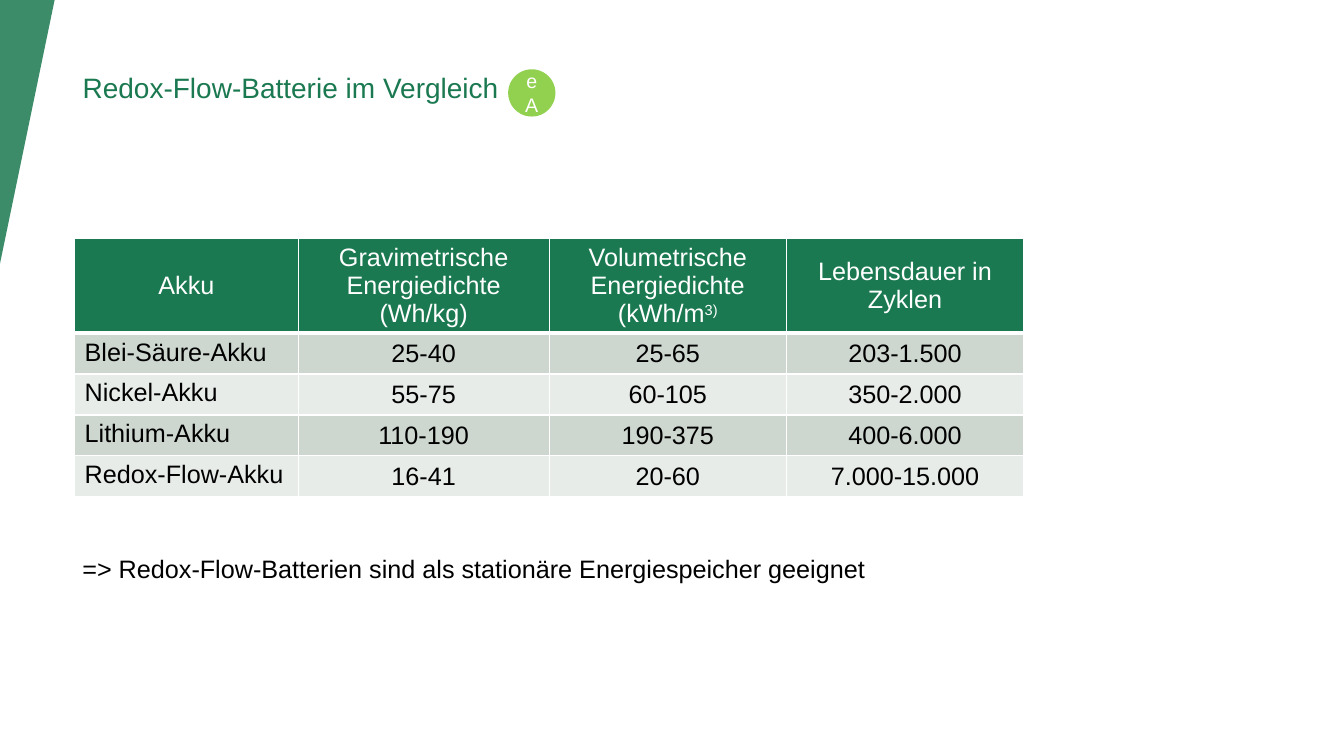
from pptx import Presentation
from pptx import util as u
from pptx.dml.color import RGBColor
from pptx.enum import shapes, text
from pptx.oxml import parse_xml
from pptx.oxml.ns import nsdecls, qn

HUES = {"green": "1A7950", "lime": "92D050", "white": "FFFFFF",
        "black": "000000", "dark": "CDD7D0", "pale": "E8ECE9"}
LEFT, MID = text.PP_ALIGN.LEFT, text.PP_ALIGN.CENTER
TOP, CENTRE = text.MSO_ANCHOR.TOP, text.MSO_ANCHOR.MIDDLE

COLS = [213, 239, 226, 226]
HEAD, ROW = 90, 39
ROWS = [
    ["Akku", "Gravimetrische Energiedichte (Wh/kg)",
     "Volumetrische Energiedichte (kWh/m^3)", "Lebensdauer in Zyklen"],
    ["Blei-Säure-Akku", "25-40", "25-65", "203-1.500"],
    ["Nickel-Akku", "55-75", "60-105", "350-2.000"],
    ["Lithium-Akku", "110-190", "190-375", "400-6.000"],
    ["Redox-Flow-Akku", "16-41", "20-60", "7.000-15.000"],
]


def px(n):
    return u.Emu(n * 9525)


def hue(name):
    return RGBColor.from_string(HUES[name])


class Page:
    """Holds the font and the current slide."""

    def __init__(self, deck, font):
        self.font = font
        self.slide = deck.slides.add_slide(deck.slide_layouts[5])

    def label(self, frame, words, size, color, align=LEFT):
        """Fill the first paragraph; text after ^ is raised."""
        para = frame.paragraphs[0]
        para.alignment = align
        base, _, power = words.partition("^")
        para.add_run().text = base
        if power:
            run = para.add_run()
            run.text = power
            run.font._element.set("baseline", "30000")
        para.font.name, para.font.size = self.font, u.Pt(size)
        para.font.color.rgb = hue(color)

    def title(self, box, words):
        shape = self.slide.shapes.title
        shape.left, shape.top, shape.width, shape.height = map(px, box)
        shape.text_frame.vertical_anchor = TOP
        self.label(shape.text_frame, words, 20, "green")

    def note(self, box, words):
        frame = self.slide.shapes.add_textbox(*map(px, box)).text_frame
        frame.word_wrap = True
        frame.auto_size = text.MSO_AUTO_SIZE.SHAPE_TO_FIT_TEXT
        self.label(frame, words, 18, "black")

    def shape(self, kind, box, color):
        shape = self.slide.shapes.add_shape(kind, *map(px, box))
        shape.shadow.inherit = False
        shape.fill.solid()
        shape.fill.fore_color.rgb = hue(color)
        shape.line.fill.background()
        return shape

    def wedge(self, box):
        shape = self.shape(shapes.MSO_SHAPE.ISOSCELES_TRIANGLE, box, "green")
        shape.adjustments[0] = 1
        shape.rotation = 180
        tint = shape._element.spPr.find(".//" + qn("a:srgbClr"))
        tint.append(parse_xml(f'<a:alpha {nsdecls("a")} val="85000"/>'))

    def badge(self, box, words):
        shape = self.shape(shapes.MSO_SHAPE.OVAL, box, "lime")
        shape.line.color.rgb = hue("lime")
        shape.line.width = u.Pt(1.5)
        frame = shape.text_frame
        frame.margin_left = frame.margin_right = px(4)
        frame.vertical_anchor = CENTRE
        self.label(frame, words, 14, "white", MID)

    def edge(self, cell, side, width):
        cell._tc.get_or_add_tcPr().append(parse_xml(
            f'<a:ln{side} {nsdecls("a")} w="{u.Pt(width)}"><a:solidFill>'
            f'<a:srgbClr val="{HUES["white"]}"/></a:solidFill></a:ln{side}>'))

    def table(self, left, top, rows):
        high = HEAD + ROW * (len(rows) - 1)
        box = left, top, sum(COLS), high
        grid = self.slide.shapes.add_table(
            len(rows), len(COLS), *map(px, box)).table
        for col, width in zip(grid.columns, COLS):
            col.width = px(width)
        for r, row in enumerate(rows):
            grid.rows[r].height = px(ROW if r else HEAD)
            for c, words in enumerate(row):
                cell = grid.cell(r, c)
                for side in "LRTB":
                    thick = (r, side) in [(0, "B"), (1, "T")]
                    self.edge(cell, side, 3 if thick else 1)
                cell.fill.solid()
                band = ("pale", "dark")[r % 2] if r else "green"
                cell.fill.fore_color.rgb = hue(band)
                name = r > 0 and c == 0
                cell.vertical_anchor = TOP if name else CENTRE
                self.label(cell.text_frame, words, 18,
                           "black" if r else "white", LEFT if name else MID)


def main():
    deck = Presentation()
    deck.slide_width, deck.slide_height = px(1280), px(720)
    page = Page(deck, "Arial")
    page.wedge((0, 0, 52, 251))
    page.title((69, 62, 902, 53), "Redox-Flow-Batterie im Vergleich")
    page.table(71, 227, ROWS)
    page.note((69, 522, 903, 38), "=> Redox-Flow-Batterien sind als "
              "stationäre Energiespeicher geeignet")
    page.badge((485, 67, 43, 43), "eA")
    deck.save("out.pptx")


if __name__ == "__main__":
    main()
